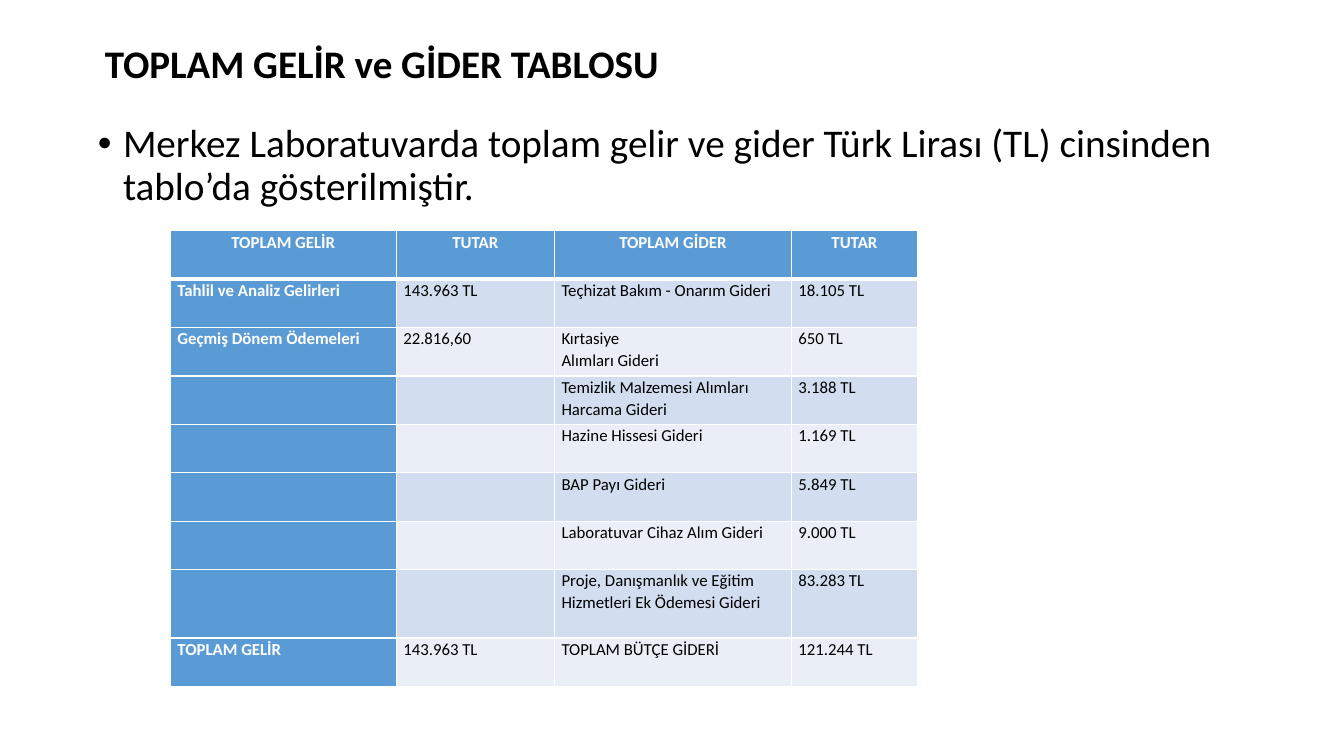
from lxml.etree import SubElement
from pptx import Presentation
from pptx.dml.color import RGBColor
from pptx.enum.text import MSO_ANCHOR, MSO_AUTO_SIZE, PP_ALIGN
from pptx.oxml.ns import qn
from pptx.util import Inches, Pt

BLUE, BAND_DARK, BAND_LIGHT = "5B9BD5", "D2DEEF", "EAEFF7"
WHITE, BLACK = "FFFFFF", "000000"


def add_text(p, text, size, color, bold=False):
    r = p.add_run()
    r.text = text
    r.font.name, r.font.size, r.font.bold = "Calibri", Pt(size), bold
    r.font.color.rgb = RGBColor.from_string(color)


def set_borders(cell, bottom):
    """Draw white cell borders, 1 pt wide except for the bottom one."""
    tcPr = cell._tc.get_or_add_tcPr()
    for i, side in enumerate("LRTB"):
        width = bottom if side == "B" else 1
        ln = SubElement(tcPr, qn(f"a:ln{side}"), w=str(Pt(width)))
        SubElement(SubElement(ln, qn("a:solidFill")), qn("a:srgbClr"), val=WHITE)
        tcPr.insert(i, ln)


prs = Presentation()
prs.slide_width, prs.slide_height = Inches(13.33), Inches(7.5)
slide = prs.slides.add_slide(prs.slide_layouts[1])
title, body = slide.placeholders

# Title and bullet
for sp, box in ((title, (0.94, 0.45, 11.5, 0.41)), (body, (0.87, 1.18, 11.5, 4.76))):
    sp.left, sp.top, sp.width, sp.height = map(Inches, box)
    sp.text_frame.word_wrap = True
    sp.text_frame.auto_size = MSO_AUTO_SIZE.NONE
    p = sp.text_frame.paragraphs[0]
    p.alignment, p.line_spacing = PP_ALIGN.LEFT, 0.9
title.text_frame.vertical_anchor = MSO_ANCHOR.MIDDLE
add_text(title.text_frame.paragraphs[0], "TOPLAM GELİR ve GİDER TABLOSU", 27.9, BLACK, True)

p = body.text_frame.paragraphs[0]
p.space_before = Pt(10)
pPr = p._p.get_or_add_pPr()
pPr.set("marL", str(Inches(0.25)))
pPr.set("indent", str(-Inches(0.25)))
SubElement(pPr, qn("a:buFont"), typeface="Arial")
SubElement(pPr, qn("a:buChar"), char="•")
add_text(p, "Merkez Laboratuvarda toplam gelir ve gider Türk Lirası (TL) cinsinden "
            "tablo’da gösterilmiştir.", 28, BLACK)

# Income and expense table
rows = [
    ("TOPLAM GELİR", "TUTAR", "TOPLAM GİDER", "TUTAR"),
    ("Tahlil ve Analiz Gelirleri", "143.963 TL", "Teçhizat Bakım - Onarım Gideri", "18.105 TL"),
    ("Geçmiş Dönem Ödemeleri", "22.816,60", "Kırtasiye\nAlımları Gideri", "650 TL"),
    ("", "", "Temizlik Malzemesi Alımları Harcama Gideri", "3.188 TL"),
    ("", "", "Hazine Hissesi Gideri", "1.169 TL"),
    ("", "", "BAP Payı Gideri", "5.849 TL"),
    ("", "", "Laboratuvar Cihaz Alım Gideri", "9.000 TL"),
    ("", "", "Proje, Danışmanlık ve Eğitim Hizmetleri Ek Ödemesi Gideri", "83.283 TL"),
    ("TOPLAM GELİR", "143.963 TL", "TOPLAM BÜTÇE GİDERİ", "121.244 TL"),
]
col_widths = [2.24, 1.57, 2.35, 1.25]
row_heights = [0.48] * 7 + [0.68, 0.48]
table = slide.shapes.add_table(
    len(rows), len(col_widths), Inches(1.69), Inches(2.29),
    Inches(sum(col_widths)), Inches(sum(row_heights))).table
table.first_col = True
for col, width in zip(table.columns, col_widths):
    col.width = Inches(width)
for row, height in zip(table.rows, row_heights):
    row.height = Inches(height)

for i, row in enumerate(rows):
    for j, text in enumerate(row):
        cell = table.cell(i, j)
        heading = i == 0 or j == 0
        fill = BLUE if heading else BAND_DARK if i % 2 else BAND_LIGHT
        cell.fill.solid()
        cell.fill.fore_color.rgb = RGBColor.from_string(fill)
        set_borders(cell, bottom=3 if i == 0 else 1)
        cell.margin_left = cell.margin_right = Inches(0.07)
        cell.margin_top = cell.margin_bottom = 0
        if not text:
            continue
        tf = cell.text_frame
        for k, line in enumerate(text.split("\n")):
            p = tf.add_paragraph() if k else tf.paragraphs[0]
            p.line_spacing = 1.07
            p.alignment = PP_ALIGN.CENTER if i == 0 else PP_ALIGN.LEFT
            add_text(p, line, 12, WHITE if heading else BLACK, heading)

prs.save("out.pptx")
